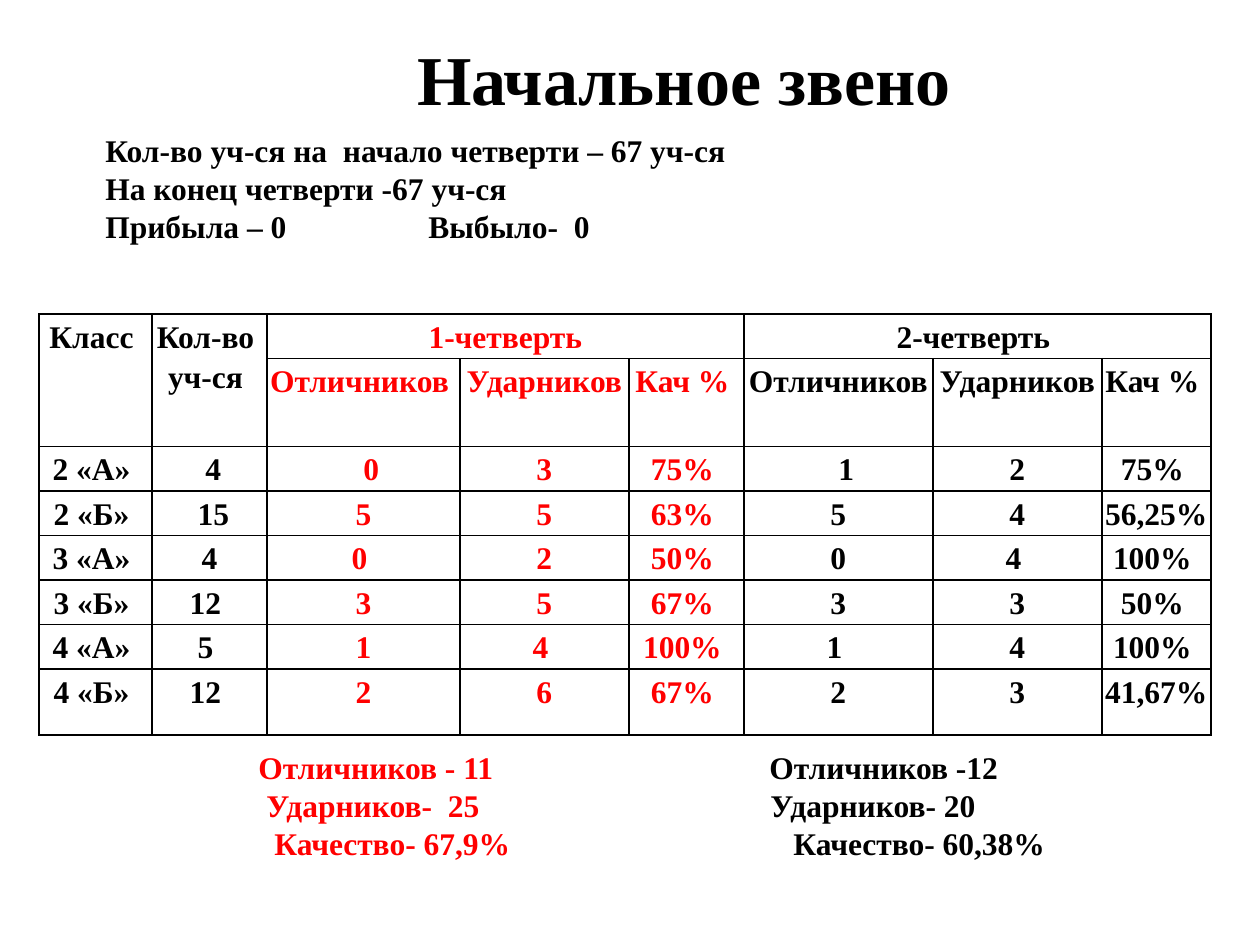
import dataclasses
import pptx
import pptx.dml.color
import pptx.enum.text
import pptx.oxml
import pptx.oxml.ns
import pptx.util

SCALE = 914400 / 126
FONT = "Times New Roman"
BLACK, RED = "000000", "FF0000"
COLS = [113, 115, 193, 169, 115, 189, 169, 109]
ROWS = [44, 88, 44, 44, 44, 44, 44, 66]
MARKS = ["Отличников ", "Ударников ", "Кач % "]
GRID = [
    ["Класс ", "Кол-во \nуч-ся ", "1-четверть", "", "", "2-четверть ", "", ""],
    ["", ""] + MARKS * 2,
    ["2 «А» ", " 4", "  0", "3", "75% ", "  1", "2", "75% "],
    ["2 «Б» ", " 15", "5", "5", "63% ", "5", "4", "56,25% "],
    ["3 «А» ", "4", "0 ", "2", "50% ", "0", "4 ", "100% "],
    ["3 «Б» ", "12 ", "3", "5", "67% ", "3", "3", "50% "],
    ["4 «А» ", "5 ", "1", "4 ", "100% ", "1 ", "4", "100% "],
    ["4 «Б» ", "12 ", "2", "6", "67% ", "2", "3", "41,67% "],
]


@dataclasses.dataclass
class Part:
    text: str
    tab: int = 0
    color: str = BLACK


@dataclasses.dataclass
class Box:
    left: int
    top: int
    width: int
    height: int
    lines: list[list[Part]]
    size: int = 18
    center: bool = False


BOXES = [
    Box(197, 29, 974, 97, [[Part("Начальное звено")]], 40, True),
    Box(93, 125, 1092, 165, [
        [Part("Кол-во уч-ся на  начало четверти – 67 уч-ся")],
        [Part("На конец четверти -67 уч-ся")],
        [Part("Прибыла – 0"), Part("Выбыло-  0", 323)],
    ]),
    Box(72, 742, 1142, 165, [
        [Part("Отличников - 11", 174, RED), Part("Отличников -12", 685)],
        [Part("Ударников-  25", 182, RED), Part("Ударников- 20", 686)],
        [Part("Качество- 67,9%", 190, RED), Part("Качество- 60,38%", 709)],
    ]),
]


def px(count: int) -> int:
    return round(count * SCALE)


def paint(font, color: str) -> None:
    font.color.rgb = pptx.dml.color.RGBColor.from_string(color)


def style(para, size: int, center: bool) -> None:
    font = para.font
    font.name, font.size, font.bold = FONT, pptx.util.Pt(size), True
    align = pptx.enum.text.PP_ALIGN
    para.alignment = align.CENTER if center else align.LEFT


def set_tabs(para, stops: list[int]) -> None:
    props = para._p.get_or_add_pPr()
    tabs = pptx.oxml.parse_xml(f"<a:tabLst {pptx.oxml.ns.nsdecls('a')}/>")
    for stop in stops:
        tab = tabs.makeelement(pptx.oxml.ns.qn("a:tab"), {"pos": str(px(stop)), "algn": "l"})
        tabs.append(tab)
    props.insert(0, tabs)


def draw_box(slide, box: Box) -> None:
    shape = slide.shapes.add_textbox(px(box.left), px(box.top), px(box.width), px(box.height))
    frame = shape.text_frame
    frame.word_wrap = True
    for num, line in enumerate(box.lines):
        para = frame.add_paragraph() if num else frame.paragraphs[0]
        stops = [part.tab for part in line if part.tab]
        if stops:
            set_tabs(para, stops)
        style(para, box.size, box.center)
        for part in line:
            run = para.add_run()
            run.text = "\t" + part.text if part.tab else part.text
            paint(run.font, part.color)


def rule_cell(cell) -> None:
    props = cell._tc.get_or_add_tcPr()
    for side in "LRTB":
        props.append(pptx.oxml.parse_xml(
            f'<a:ln{side} {pptx.oxml.ns.nsdecls("a")} w="12700"><a:solidFill>'
            f'<a:srgbClr val="{BLACK}"/></a:solidFill></a:ln{side}>'))
    cell.fill.background()


def fill_cell(cell, text: str, color: str) -> None:
    cell.margin_left = cell.margin_right = px(3)
    cell.margin_top, cell.margin_bottom = px(1), 0
    rule_cell(cell)
    cell.text_frame.text = text
    for para in cell.text_frame.paragraphs:
        style(para, 18, True)
        para.line_spacing = 1.15
        paint(para.font, color)


def draw_table(slide) -> None:
    frame = slide.shapes.add_table(
        len(ROWS), len(COLS), px(39), px(314), px(sum(COLS)), px(sum(ROWS)))
    table = frame.table
    table.first_row = table.horz_banding = False
    for col, width in zip(table.columns, COLS):
        col.width = px(width)
    for row, height in zip(table.rows, ROWS):
        row.height = px(height)
    for row, texts in enumerate(GRID):
        for col, text in enumerate(texts):
            fill_cell(table.cell(row, col), text, RED if 2 <= col <= 4 else BLACK)
    for col in (0, 1):
        table.cell(0, col).merge(table.cell(1, col))
    for col in (2, 5):
        table.cell(0, col).merge(table.cell(0, col + 2))


def main() -> None:
    deck = pptx.Presentation()
    deck.slide_width, deck.slide_height = px(1260), px(945)
    slide = deck.slides.add_slide(deck.slide_layouts[6])
    for box in BOXES:
        draw_box(slide, box)
    draw_table(slide)
    deck.save("out.pptx")


if __name__ == "__main__":
    main()
